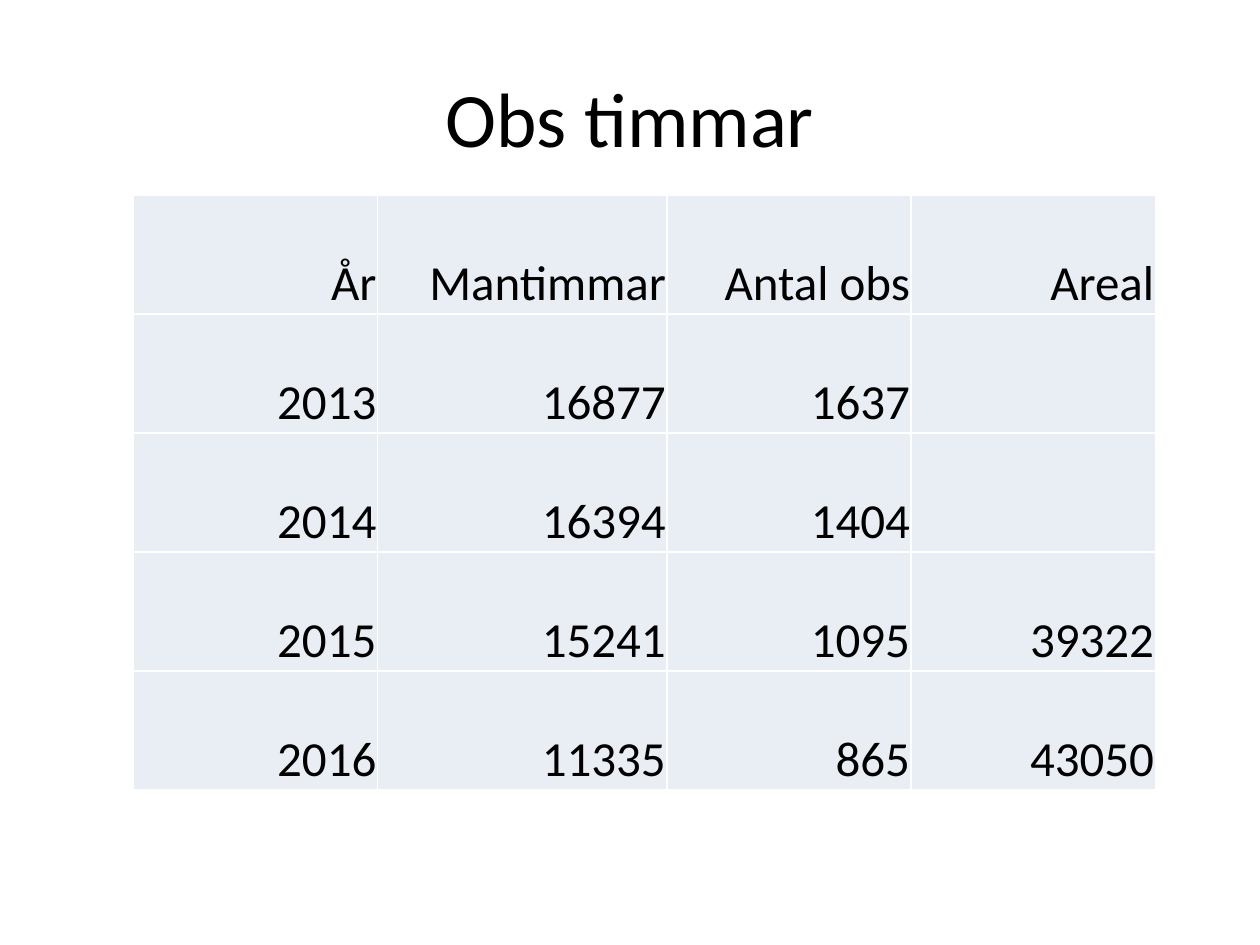
from lxml import etree
from pptx import Presentation
from pptx.dml.color import RGBColor
from pptx.enum.text import MSO_ANCHOR, PP_ALIGN
from pptx.oxml.ns import qn
from pptx.util import Inches, Pt

MIDDLE, BOTTOM = MSO_ANCHOR.MIDDLE, MSO_ANCHOR.BOTTOM
CENTER, RIGHT = PP_ALIGN.CENTER, PP_ALIGN.RIGHT

FONT = "Calibri"
BLACK, WHITE, PALE_BLUE = "000000", "FFFFFF", "E9EDF4"

ROWS = [
    ("År", "Mantimmar", "Antal obs", "Areal"),
    ("2013", "16877", "1637", ""),
    ("2014", "16394", "1404", ""),
    ("2015", "15241", "1095", "39322"),
    ("2016", "11335", "865", "43050"),
]
COLUMN_SHARES = (1.94, 2.3, 1.94, 1.94)


def color(hex_string):
    return RGBColor.from_string(hex_string)


def style_paragraph(paragraph, size, alignment):
    paragraph.alignment = alignment
    paragraph.font.name = FONT
    paragraph.font.size = Pt(size)
    paragraph.font.bold = False
    paragraph.font.color.rgb = color(BLACK)


def add_borders(cell, hex_string, width):
    properties = cell._tc.get_or_add_tcPr()
    for side in ("a:lnL", "a:lnR", "a:lnT", "a:lnB"):
        line = etree.SubElement(properties, qn(side), w=str(Pt(width)))
        fill = etree.SubElement(line, qn("a:solidFill"))
        etree.SubElement(fill, qn("a:srgbClr"), val=hex_string)


def add_title(slide, text, left, top, width, height):
    box = slide.shapes.add_textbox(left, top, width, height)
    frame = box.text_frame
    frame.word_wrap = True
    frame.vertical_anchor = MIDDLE
    frame.text = text
    style_paragraph(frame.paragraphs[0], 44, CENTER)


def fill_cell(cell, text):
    cell.margin_left = cell.margin_right = cell.margin_top = Inches(0.01)
    cell.margin_bottom = 0
    cell.vertical_anchor = BOTTOM
    add_borders(cell, WHITE, 1)
    cell.fill.solid()
    cell.fill.fore_color.rgb = color(PALE_BLUE)
    cell.text = text
    style_paragraph(cell.text_frame.paragraphs[0], 28, RIGHT)


def add_hours_table(slide, left, top, width, height):
    table = slide.shapes.add_table(
        len(ROWS), len(COLUMN_SHARES), left, top, width, height
    ).table
    table.first_row = False
    table.horz_banding = False

    # Column widths share the box; rows are equal
    for column, share in zip(table.columns, COLUMN_SHARES):
        column.width = int(width * share / sum(COLUMN_SHARES))
    for row, texts in zip(table.rows, ROWS):
        row.height = int(height / len(ROWS))
        for cell, text in zip(row.cells, texts):
            fill_cell(cell, text)


def main():
    presentation = Presentation()
    presentation.slide_width = Inches(10)
    presentation.slide_height = Inches(7.5)
    slide = presentation.slides.add_slide(presentation.slide_layouts[6])

    # Title
    add_title(slide, "Obs timmar", Inches(0.5), Inches(0.3), Inches(9), Inches(1.25))
    # Observation hours by year
    add_hours_table(slide, Inches(1.06), Inches(1.55), Inches(8.11), Inches(4.72))

    presentation.save("out.pptx")


if __name__ == "__main__":
    main()
